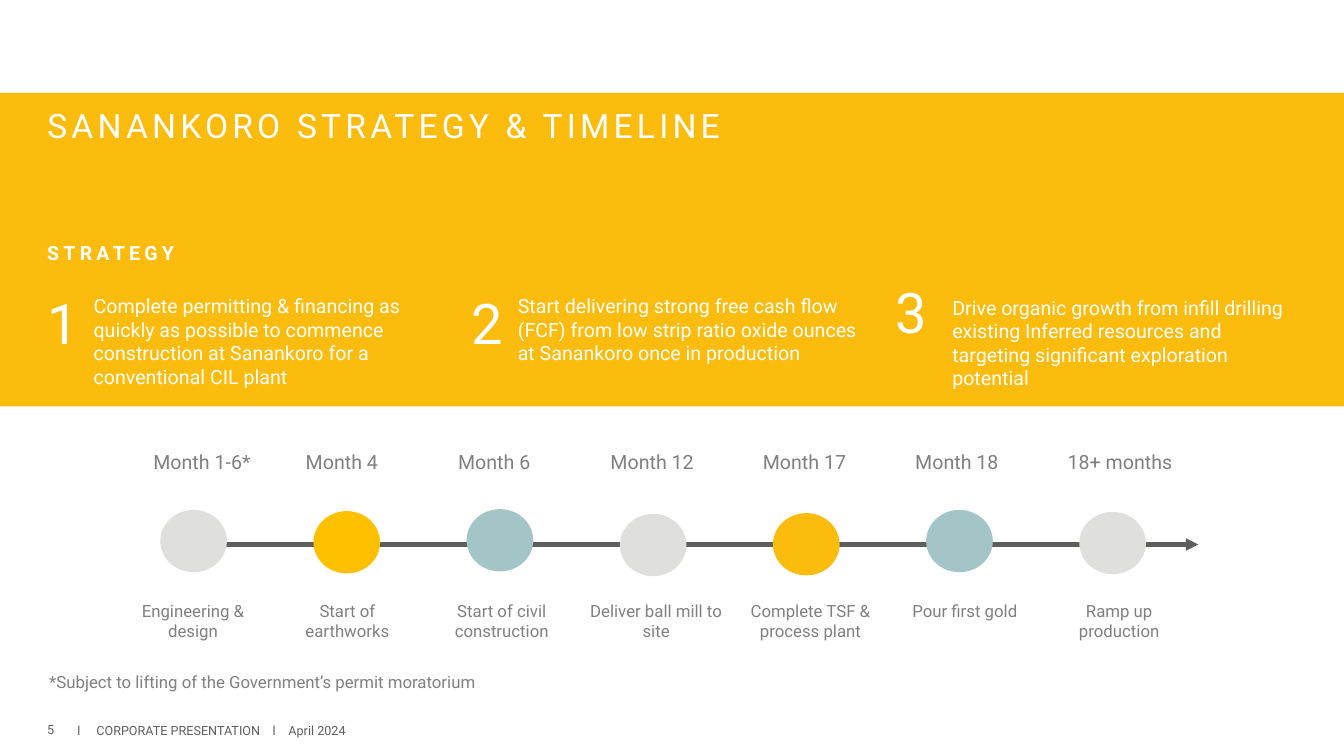
import pptx
import pptx.util
import pptx.dml.color
import pptx.enum.text
import pptx.enum.shapes
import pptx.oxml.ns
import lxml.etree

Cm = pptx.util.Cm
Pt = pptx.util.Pt
Align = pptx.enum.text.PP_ALIGN
Anchor = pptx.enum.text.MSO_ANCHOR
Shape = pptx.enum.shapes.MSO_SHAPE

FONT = "Roboto"
WHITE, AMBER, GOLD = "FFFFFF", "FBBC0D", "FFC000"
SILVER, TEAL, GREY, DARK = "DFDFDE", "A3C5C8", "808080", "5E5E5E"

TITLE = "SANANKORO STRATEGY & TIMELINE"
STRATEGY = [
    ("1", 0.94, 7.14, 2.11, 7.29,
     "Complete permitting & financing as quickly as possible to commence "
     "construction at Sanankoro for a conventional CIL plant"),
    ("2", 11.63, 7.14, 12.8, 7.29,
     "Start delivering strong free cash flow (FCF) from low strip ratio "
     "oxide ounces at Sanankoro once in production"),
    ("3", 22.33, 6.88, 23.75, 7.32,
     "Drive organic growth from infill drilling existing Inferred resources "
     "and targeting significant exploration potential"),
]
MILESTONES = [
    ("Month 1-6*", "Engineering & design", SILVER, 12.85),
    ("Month 4", "Start of earthworks", GOLD, 12.88),
    ("Month 6", "Start of civil construction", TEAL, 12.83),
    ("Month 12", "Deliver ball mill to site", SILVER, 12.95),
    ("Month 17", "Complete TSF & process plant", AMBER, 12.93),
    ("Month 18", "Pour first gold", TEAL, 12.85),
    ("18+ months", "Ramp up production", SILVER, 12.9),
]
FOOTNOTE = "*Subject to lifting of the Government’s permit moratorium"
FOOTER = "l\tCORPORATE PRESENTATION\tl\tApril 2024"
FOOTER_TABS = (0.48, 4.92, 5.32)
PAGE_NUMBER = "5"
MARKER_LEFT, MARKER_PITCH = 4.04, 3.86


def color(value):
    return pptx.dml.color.RGBColor.from_string(value)


def write(frame, text, size, fill, bold=False, spacing=0, align=Align.LEFT):
    para = frame.paragraphs[0]
    para.alignment = align
    span = para.add_run()
    span.text = text
    span.font.name = FONT
    span.font.size = Pt(size)
    span.font.bold = bold
    span.font.color.rgb = color(fill)
    if spacing:
        span.font._element.set("spc", str(spacing * 100))
    return para


def add_text(page, place, text, size, fill, anchor=Anchor.TOP, **style):
    box = page.shapes.add_textbox(*map(Cm, place))
    box.text_frame.word_wrap = True
    box.text_frame.vertical_anchor = anchor
    return write(box.text_frame, text, size, fill, **style)


def add_block(page, kind, place, fill):
    block = page.shapes.add_shape(kind, *map(Cm, place))
    block.shadow.inherit = False
    block.fill.solid()
    block.fill.fore_color.rgb = color(fill)
    block.line.fill.background()
    return block


def add_row(page, labels, left, top, pitch, height, size, align):
    table = page.shapes.add_table(1, len(labels), Cm(left), Cm(top),
                                  Cm(pitch * len(labels)), Cm(height)).table
    table.first_row = False
    table.horz_banding = False
    for index, label in enumerate(labels):
        table.columns[index].width = Cm(pitch)
        cell = table.cell(0, index)
        cell.fill.background()
        write(cell.text_frame, label, size, GREY, align=align)


def add_header(page):
    band = add_block(page, Shape.RECTANGLE, (0, 2.34, 33.87, 7.9), AMBER)
    page.shapes._spTree.insert(2, band._element)
    title = page.shapes.title
    title.left, title.top, title.width, title.height = map(Cm, (0.94, 2.34, 32, 1.75))
    title.text_frame.auto_size = pptx.enum.text.MSO_AUTO_SIZE.NONE
    title.text_frame.vertical_anchor = Anchor.MIDDLE
    write(title.text_frame, TITLE, 24, WHITE, spacing=3).line_spacing = 0.9


def add_strategy(page):
    add_text(page, (0.94, 5.94, 12.29, 0.86), "STRATEGY", 14, WHITE, bold=True, spacing=3)
    for number, number_left, number_top, left, top, text in STRATEGY:
        add_text(page, (left, top, 9.17, 2.06), text, 14, WHITE)
        add_text(page, (number_left, number_top, 2.16, 1.96), number, 40, WHITE)


def add_timeline(page):
    axis = page.shapes.add_connector(pptx.enum.shapes.MSO_CONNECTOR.STRAIGHT,
                                     Cm(4.52), Cm(13.72), Cm(30.2), Cm(13.72))
    axis.line.color.rgb = color(DARK)
    axis.line.width = Pt(3)
    qn = pptx.oxml.ns.qn
    lxml.etree.SubElement(axis.line._get_or_add_ln(), qn("a:tailEnd"), type="triangle")
    lxml.etree.SubElement(axis._element.spPr, qn("a:effectLst"))
    months, steps, fills, tops = zip(*MILESTONES)
    for index, (fill, top) in enumerate(zip(fills, tops)):
        left = MARKER_LEFT + index * MARKER_PITCH
        add_block(page, Shape.FLOWCHART_CONNECTOR, (left, top, 1.68, 1.57), fill)
    add_row(page, months, 3.61, 11.25, 3.84, 1.04, 14, Align.LEFT)
    add_row(page, steps, 2.92, 15.04, 3.89, 1.27, 12, Align.CENTER)


def add_footer(page):
    add_text(page, (0.99, 16.79, 15.54, 0.76), FOOTNOTE, 12, GREY)
    add_text(page, (0.94, 17.86, 1.88, 1.02), PAGE_NUMBER, 9, DARK, Anchor.MIDDLE)
    para = add_text(page, (1.7, 17.91, 11.43, 1.02), FOOTER, 9, DARK, Anchor.MIDDLE)
    qn = pptx.oxml.ns.qn
    tabs = lxml.etree.SubElement(para._p.get_or_add_pPr(), qn("a:tabLst"))
    for stop in FOOTER_TABS:
        lxml.etree.SubElement(tabs, qn("a:tab"), pos=str(int(Cm(stop))), algn="l")


def main():
    deck = pptx.Presentation()
    deck.slide_width, deck.slide_height = Cm(33.87), Cm(19.05)
    page = deck.slides.add_slide(deck.slide_layouts[5])
    add_header(page)
    add_strategy(page)
    add_timeline(page)
    add_footer(page)
    deck.save("out.pptx")


if __name__ == "__main__":
    main()
